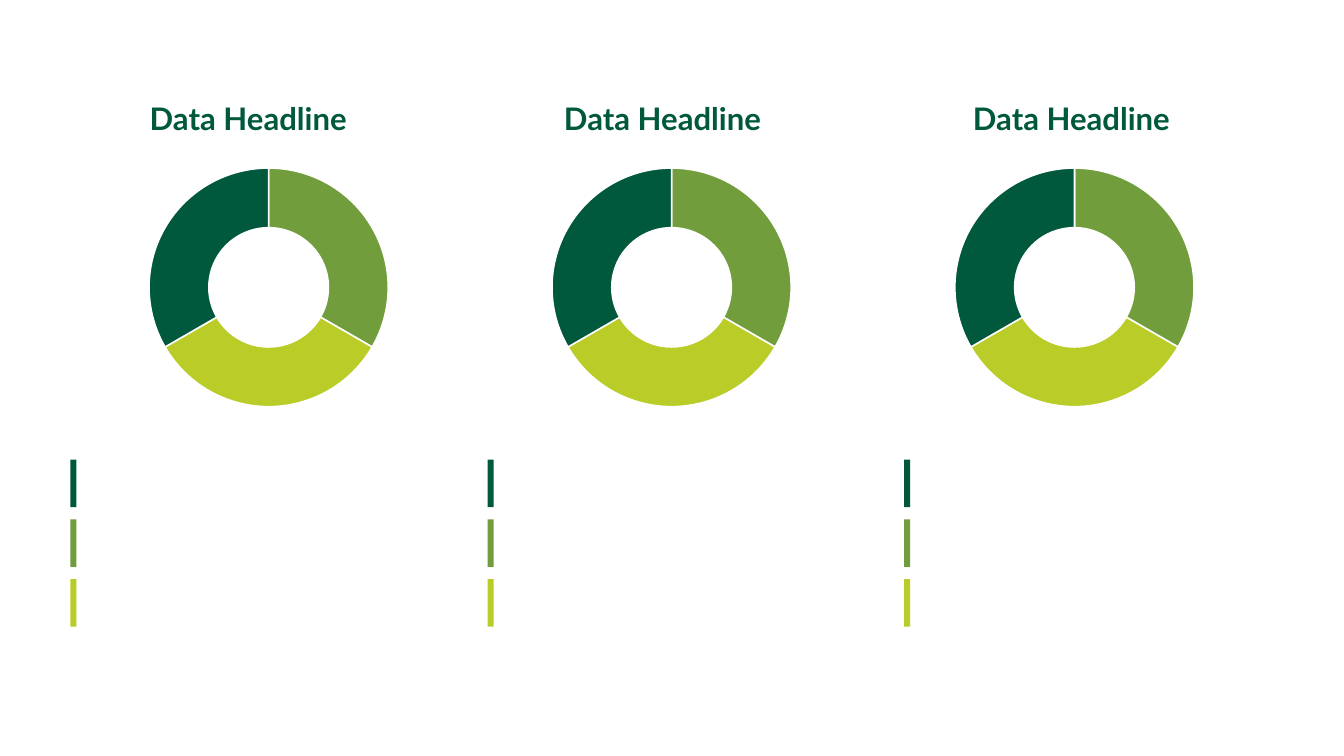
import pptx
import pptx.chart.data
import pptx.dml.color
import pptx.enum.chart
import pptx.enum.shapes
import pptx.enum.text
import pptx.oxml
import pptx.oxml.ns
import pptx.util

Inches = pptx.util.Inches
Pt = pptx.util.Pt

# Content
DARK, MID, LIME, WHITE = "00583D", "719D3D", "BACC28", "FFFFFF"
SHARES = [("1", 33, MID), ("2", 33, LIME), ("3", 33, DARK)]
KEY_COLORS = [DARK, MID, LIME]
# One panel per column: headline, headline left, key left
PANELS = [
    ("Data Headline", 1.01, 0.93),
    ("Data Headline", 6.49, 6.45),
    ("Data Headline", 11.9, 11.96),
]
HEADLINE_FONT = {"name": "Lato", "size": Pt(29.6), "bold": True}
CHART_FONT = {"name": "Lato", "size": Pt(10)}

# Placement in inches
CHART_LEFT, CHART_STEP = 1.81, 5.33
KEY_TOP, KEY_STEP = 6.08, 0.79
PLOT_LAYOUT = {"layoutTarget": "inner", "xMode": "edge", "yMode": "edge",
               "x": 0, "y": 0.14, "w": 0.57, "h": 0.86}


def rgb(color):
    return pptx.dml.color.RGBColor.from_string(color)


def set_font(font, values, color):
    for attribute, value in values.items():
        setattr(font, attribute, value)
    font.color.rgb = rgb(color)


def add_key_bar(slide, left, top, color):
    bar = slide.shapes.add_shape(
        pptx.enum.shapes.MSO_SHAPE.RECTANGLE,
        Inches(left), Inches(top), Inches(0.08), Inches(0.63))
    bar.shadow.inherit = False
    bar.fill.solid()
    bar.fill.fore_color.rgb = rgb(color)
    bar.line.fill.background()


def add_headline(slide, text, left):
    headline = slide.shapes.add_textbox(
        Inches(left), Inches(1.26), Inches(4.55), Inches(0.54))
    frame = headline.text_frame
    frame.word_wrap = True
    paragraph = frame.paragraphs[0]
    paragraph.text = text
    paragraph.alignment = pptx.enum.text.PP_ALIGN.CENTER
    set_font(paragraph.runs[0].font, HEADLINE_FONT, DARK)


def place_plot(chart):
    """Fix the ring's place inside the chart frame."""
    qn = pptx.oxml.ns.qn
    plot_area = chart.element.find(".//" + qn("c:plotArea"))
    old_layout = plot_area.find(qn("c:layout"))
    if old_layout is not None:
        plot_area.remove(old_layout)
    fields = "".join(f'<c:{tag} val="{value}"/>'
                     for tag, value in PLOT_LAYOUT.items())
    plot_area.insert(0, pptx.oxml.parse_xml(
        f'<c:layout {pptx.oxml.ns.nsdecls("c")}>'
        f"<c:manualLayout>{fields}</c:manualLayout></c:layout>"))
    plot_area.find(".//" + qn("c:holeSize")).set("val", "45")


def add_ring(slide, left):
    data = pptx.chart.data.CategoryChartData()
    data.categories = [name for name, _, _ in SHARES]
    data.add_series("Series 1", [value for _, value, _ in SHARES])
    chart = slide.shapes.add_chart(
        pptx.enum.chart.XL_CHART_TYPE.DOUGHNUT,
        Inches(left), Inches(1.71), Inches(6.12), Inches(3.68), data).chart
    chart.has_title = False
    chart.has_legend = False
    set_font(chart.font, CHART_FONT, "000000")
    ring = chart.plots[0]
    ring.vary_by_categories = True
    ring.has_data_labels = False
    for index, (_, _, color) in enumerate(SHARES):
        slice_format = ring.series[0].points[index].format
        slice_format.fill.solid()
        slice_format.fill.fore_color.rgb = rgb(color)
        slice_format.line.color.rgb = rgb(WHITE)
        slice_format.line.width = Pt(1.5)
    place_plot(chart)


def main():
    deck = pptx.Presentation()
    deck.slide_width, deck.slide_height = Inches(17.78), Inches(10)
    slide = deck.slides.add_slide(deck.slide_layouts[6])
    slide.background.fill.solid()
    slide.background.fill.fore_color.rgb = rgb(WHITE)

    # Each column: colour key, headline, ring chart
    for column, (headline, headline_left, key_left) in enumerate(PANELS):
        for row, color in enumerate(KEY_COLORS):
            add_key_bar(slide, key_left, KEY_TOP + row * KEY_STEP, color)
        add_headline(slide, headline, headline_left)
        add_ring(slide, CHART_LEFT + column * CHART_STEP)

    deck.save("out.pptx")


if __name__ == "__main__":
    main()
